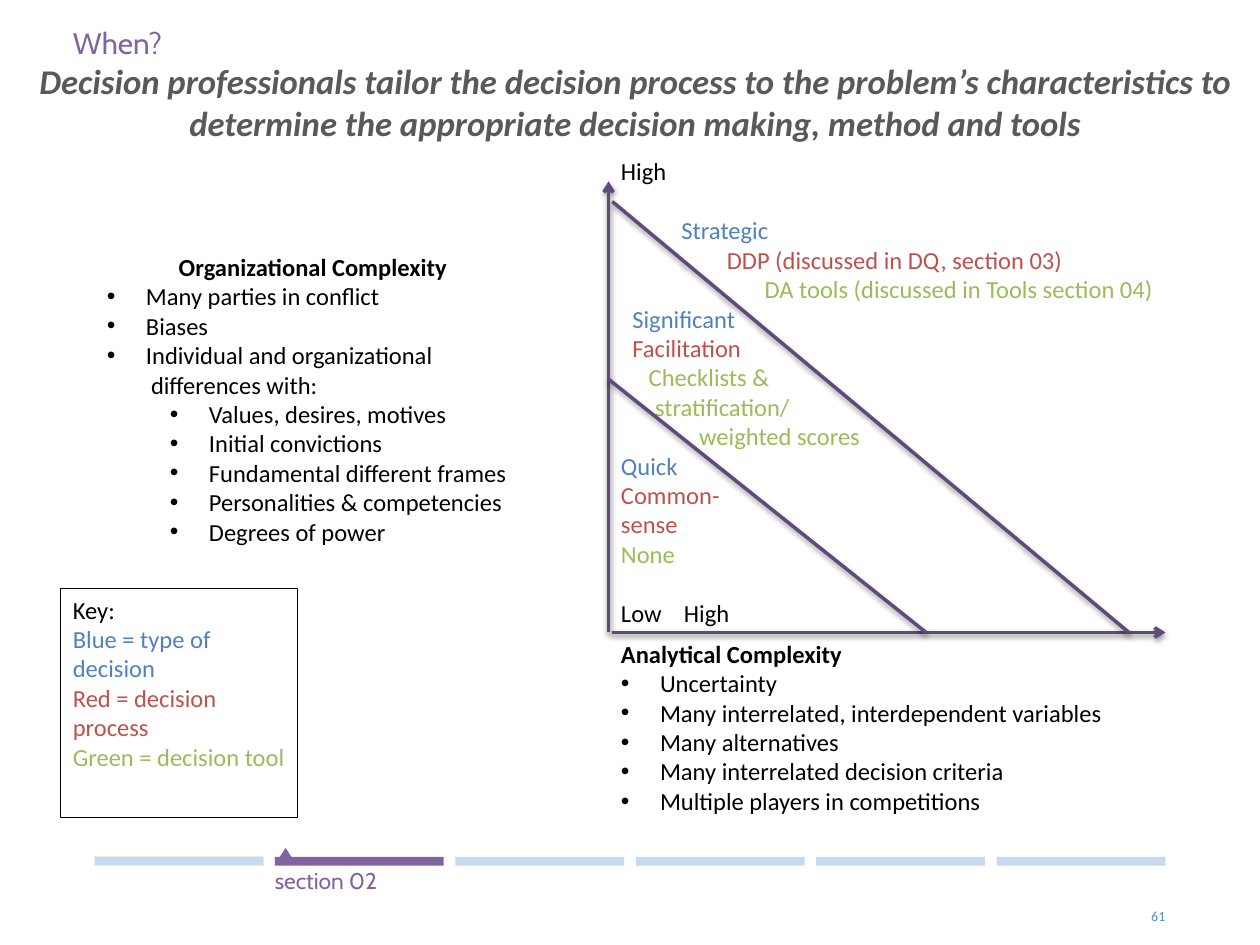
"""Builds the slide on how problem complexity sets the decision process."""
from lxml.etree import SubElement
from pptx import Presentation
from pptx.dml.color import RGBColor
from pptx.enum.shapes import MSO_CONNECTOR as CONN, MSO_SHAPE as SHAPE
from pptx.enum.text import MSO_ANCHOR as ANCHOR, MSO_AUTO_SIZE as FIT, PP_ALIGN as ALIGN
from pptx.oxml import parse_xml
from pptx.oxml.ns import nsdecls, qn
from pptx.util import Inches, Pt

COLORS = {
    "black": "000000", "title": "595959", "purple": "8064A2", "axis": "604A7B",
    "bar": "C6D9F1", "edge": "EEECE1", "page": "558ED5",
    "type": "4F81BD", "process": "C0504D", "tool": "9BBB59",
}
COLS, ROWS = 100, 75
HANG = 3.1
SHADOW = (f'<a:effectLst {nsdecls("a")}><a:outerShdw blurRad="{Pt(3.1)}" dist="{Pt(1.6)}" '
          'dir="5400000" rotWithShape="0"><a:srgbClr val="000000"><a:alpha val="38000"/>'
          '</a:srgbClr></a:outerShdw></a:effectLst>')


def rgb(name):
    return RGBColor.from_string(COLORS[name])


def unit(n):
    return Inches(n * 10 / COLS)


def write(p, text, size=14, color="black", font="Calibri", bold=False, italic=False,
          align=ALIGN.LEFT, indent=0, bullet=False, tab=None, before=None, spacing=None):
    pPr = p._p.get_or_add_pPr()
    pPr.set("marL", str(unit(indent)))
    pPr.set("indent", str(unit(-HANG) if bullet else 0))
    if bullet:
        SubElement(pPr, qn("a:buFont"), typeface="Arial")
        SubElement(pPr, qn("a:buChar"), char="•")
    else:
        SubElement(pPr, qn("a:buNone"))
    if tab:
        tabs = SubElement(pPr, qn("a:tabLst"))
        SubElement(tabs, qn("a:tab"), pos=str(unit(tab)), algn="l")
    p.alignment = align
    if before:
        p.space_before = Pt(before)
    if spacing:
        p.line_spacing = spacing
    r = p.add_run()
    r.text = text
    f = r.font
    f.name, f.size, f.bold, f.italic = font, Pt(size), bold, italic
    f.color.rgb = rgb(color)


class Deck:
    def __init__(self):
        self.prs = Presentation()
        self.prs.slide_width, self.prs.slide_height = unit(COLS), unit(ROWS)
        self.s = self.prs.slides.add_slide(self.prs.slide_layouts[5])

    def fill_text(self, sp, paras, inset=True, top=None, anchor=ANCHOR.TOP):
        tf = sp.text_frame
        tf.word_wrap, tf.auto_size, tf.vertical_anchor = True, FIT.NONE, anchor
        if not inset:
            tf.margin_left = tf.margin_right = tf.margin_top = tf.margin_bottom = 0
        if top is not None:
            tf.margin_top = unit(top)
        for i, (text, fmt) in enumerate(paras):
            write(tf.add_paragraph() if i else tf.paragraphs[0], text, **fmt)

    def title(self, box, text, top, **fmt):
        sp = self.s.shapes.title
        sp.left, sp.top, sp.width, sp.height = map(unit, box)
        self.fill_text(sp, [(text, fmt)], top=top)

    def text(self, box, paras, **frame):
        self.fill_text(self.s.shapes.add_textbox(*map(unit, box)), paras, **frame)

    def shape(self, box, fill=None, line=None, kind=SHAPE.RECTANGLE, paras=()):
        sp = self.s.shapes.add_shape(kind, *map(unit, box))
        sp.shadow.inherit = False
        if fill:
            sp.fill.solid()
            sp.fill.fore_color.rgb = rgb(fill)
        else:
            sp.fill.background()
        if line:
            sp.line.color.rgb, sp.line.width = rgb(line), Pt(0.75)
        else:
            sp.line.fill.background()
        self.fill_text(sp, paras)

    def line(self, x1, y1, x2, y2, arrow=False):
        c = self.s.shapes.add_connector(CONN.STRAIGHT, *map(unit, (x1, y1, x2, y2)))
        c.line.color.rgb, c.line.width = rgb("axis"), Pt(2)
        if arrow:
            SubElement(c.line._get_or_add_ln(), qn("a:tailEnd"), type="arrow")
        c._element.spPr.append(parse_xml(SHADOW))


def bullets(items, indent=HANG):
    return [(item, {"bullet": True, "indent": indent}) for item in items]


def tinted(rows):
    return [(text, {"color": color, "indent": indent}) for text, color, indent in rows]


def main():
    deck = Deck()
    deck.title((1.2, 1.9, 98.4, 8.1),
               "Decision professionals tailor the decision process to the problem’s "
               "characteristics to determine the appropriate decision making, method and tools",
               top=2.85, size=19.8, color="title", bold=True, italic=True, align=ALIGN.CENTER)
    deck.text((4.8, 1.9, 87.5, 8.1),
              [("When?", {"size": 17, "font": "Cabin", "color": "purple", "spacing": 0.85})])

    left, step, width, active = 7.5, 14.32, 13.4, 1
    for i in range(6):
        deck.shape((left + i * step, 68, width, 0.7),
                   fill="purple" if i == active else "bar", line=None if i else "edge")
    mark = left + active * step
    deck.shape((mark, 67.3, 1.7, 1.3), fill="purple", kind=SHAPE.ISOSCELES_TRIANGLE)
    deck.text((mark, 68.8, width, 2.2),
              [("section 02", {"size": 13, "font": "Cabin", "color": "purple"})], inset=False)
    deck.text((89.3, 72.1, 3.2, 1.3),
              [("61", {"size": 8, "color": "page", "align": ALIGN.RIGHT})],
              inset=False, anchor=ANCHOR.BOTTOM)

    axis, base = 48.3, 50.2
    deck.line(axis, base, axis, 14.4, arrow=True)
    deck.line(48.6, base, 92.5, base, arrow=True)
    strategic, *levels = tinted([
        ("Strategic", "type", 4.8),
        ("DDP (discussed in DQ, section 03)", "process", 8.4),
        ("DA tools (discussed in Tools section 04)", "tool", 11.4),
        ("Significant", "type", 0.9),
        ("Facilitation", "process", 0.9),
        ("Checklists &", "tool", 2.2),
        ("stratification/", "tool", 2.7),
        ("weighted scores", "tool", 6.2),
        ("Quick", "type", 0),
        ("Common-", "process", 0),
        ("sense", "process", 0),
        ("None", "tool", 0),
    ])
    strategic[1]["before"] = 17
    deck.text((axis, 11.9, 47.9, 41.7),
              [("High", {}), strategic, *levels, ("Low\tHigh", {"tab": 40.2, "before": 17})])

    deck.shape((4.8, 46.7, 18.8, 18.2), line="black", paras=tinted([
        ("Key:", "black", 0),
        ("Blue = type of decision", "type", 0),
        ("Red = decision process", "process", 0),
        ("Green = decision tool", "tool", 0),
    ]))
    deck.text((7.5, 19.5, 37.2, 24.6), [
        ("Organizational Complexity", {"bold": True, "indent": 5.7}),
        *bullets(["Many parties in conflict", "Biases", "Individual and organizational"]),
        ("differences with:", {"indent": 3.5}),
        *bullets(["Values, desires, motives", "Initial convictions",
                  "Fundamental different frames", "Personalities & competencies",
                  "Degrees of power"], indent=8.1),
    ])
    deck.text((axis, base, 43.2, 15.1), [
        ("Analytical Complexity", {"bold": True}),
        *bullets(["Uncertainty", "Many interrelated, interdependent variables",
                  "Many alternatives", "Many interrelated decision criteria",
                  "Multiple players in competitions"]),
    ])
    deck.line(axis, 30.1, 73.5, base)
    deck.line(48.6, 16, 89.6, base)
    deck.prs.save("out.pptx")


if __name__ == "__main__":
    main()
